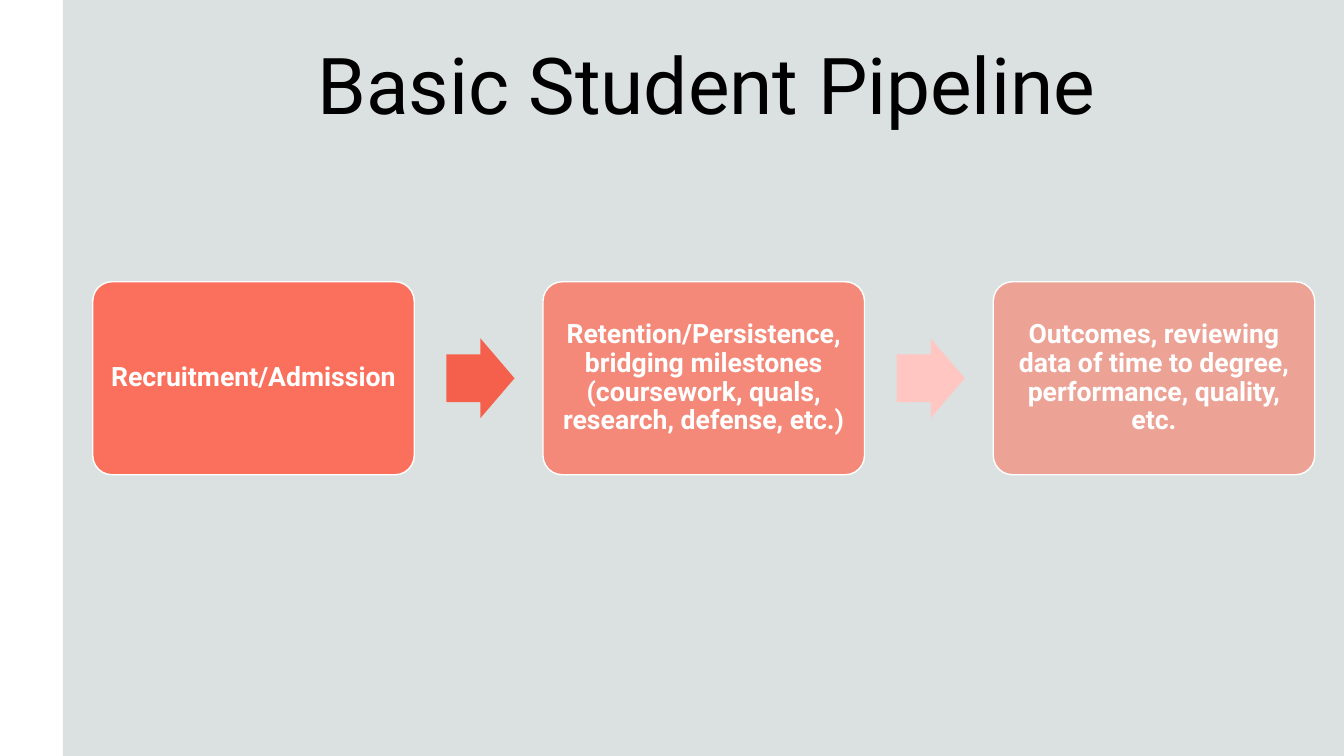
from lxml import etree
from pptx import Presentation
from pptx.dml.color import RGBColor
from pptx.enum.shapes import MSO_SHAPE
from pptx.enum.text import MSO_ANCHOR, PP_ALIGN
from pptx.oxml.ns import qn
from pptx.util import Inches, Pt

RECT = MSO_SHAPE.RECTANGLE
ROUNDED = MSO_SHAPE.ROUNDED_RECTANGLE
ARROW = MSO_SHAPE.RIGHT_ARROW
MIDDLE = MSO_ANCHOR.MIDDLE
CENTER = PP_ALIGN.CENTER

BLACK = RGBColor(0x00, 0x00, 0x00)
WHITE = RGBColor(0xFF, 0xFF, 0xFF)
PANEL = RGBColor(0xDB, 0xE1, 0xE0)
CORAL = RGBColor(0xFF, 0x64, 0x4E)
ARROW_RED = RGBColor(0xF4, 0x60, 0x4B)
ARROW_PINK = RGBColor(0xFF, 0xC6, 0xC2)

LEFT, TOP = 1.84, 5.59
BOX_W, BOX_H = 6.38, 3.83
STEP = 8.935
ARROW_W, ARROW_H = 1.35, 1.58
ARROW_OFFSET = 7.02

# text, fill opacity in percent, colour of the arrow that follows
STAGES = [
    ("Recruitment/Admission", 90, ARROW_RED),
    ("Retention/Persistence, bridging milestones (coursework, quals, "
     "research, defense, etc.)", 70, ARROW_PINK),
    ("Outcomes, reviewing data of time to degree, performance, quality, etc.",
     50, None),
]


def add_filled(kind, left, top, width, height, color):
    sp = s.shapes.add_shape(kind, Inches(left), Inches(top), Inches(width), Inches(height))
    sp.shadow.inherit = False
    sp.fill.solid()
    sp.fill.fore_color.rgb = color
    sp.line.fill.background()
    return sp


def set_text(sp, text, size, color, bold=False, inset=0.06, spacing=1.0):
    tf = sp.text_frame
    tf.word_wrap = True
    tf.vertical_anchor = MIDDLE
    tf.margin_left = tf.margin_right = Inches(inset)
    tf.margin_top = tf.margin_bottom = Inches(inset)
    p = tf.paragraphs[0]
    p.alignment = CENTER
    p.line_spacing = spacing
    r = p.add_run()
    r.text = text
    r.font.name = "Roboto"
    r.font.size = Pt(size)
    r.font.bold = bold
    r.font.color.rgb = color


prs = Presentation()
prs.slide_width, prs.slide_height = Inches(26.67), Inches(15)
s = prs.slides.add_slide(prs.slide_layouts[5])
s.background.fill.solid()
s.background.fill.fore_color.rgb = WHITE

title = s.shapes.title
title.left, title.top = Inches(2.53), Inches(0.39)
title.width, title.height = Inches(22.97), Inches(2.5)
set_text(title, "Basic Student Pipeline", 112, BLACK)

panel = add_filled(RECT, 1.25, 0, 25.42, 15, PANEL)
title.element.addprevious(panel.element)  # keep the panel behind the title

for i, (text, opacity, arrow_color) in enumerate(STAGES):
    left = LEFT + i * STEP
    box = add_filled(ROUNDED, left, TOP, BOX_W, BOX_H, CORAL)
    box.adjustments[0] = 0.1
    fill_color = box.element.spPr.find(qn("a:solidFill"))[0]
    etree.SubElement(fill_color, qn("a:alpha")).set("val", str(opacity * 1000))
    box.line.color.rgb = WHITE
    box.line.width = Pt(2)
    set_text(box, text, 38, WHITE, bold=True, inset=0.16, spacing=0.9)
    if arrow_color is not None:
        arrow = add_filled(ARROW, left + ARROW_OFFSET, TOP + (BOX_H - ARROW_H) / 2,
                           ARROW_W, ARROW_H, arrow_color)
        arrow.adjustments[0] = 0.6
        arrow.adjustments[1] = 0.5

prs.save("out.pptx")
